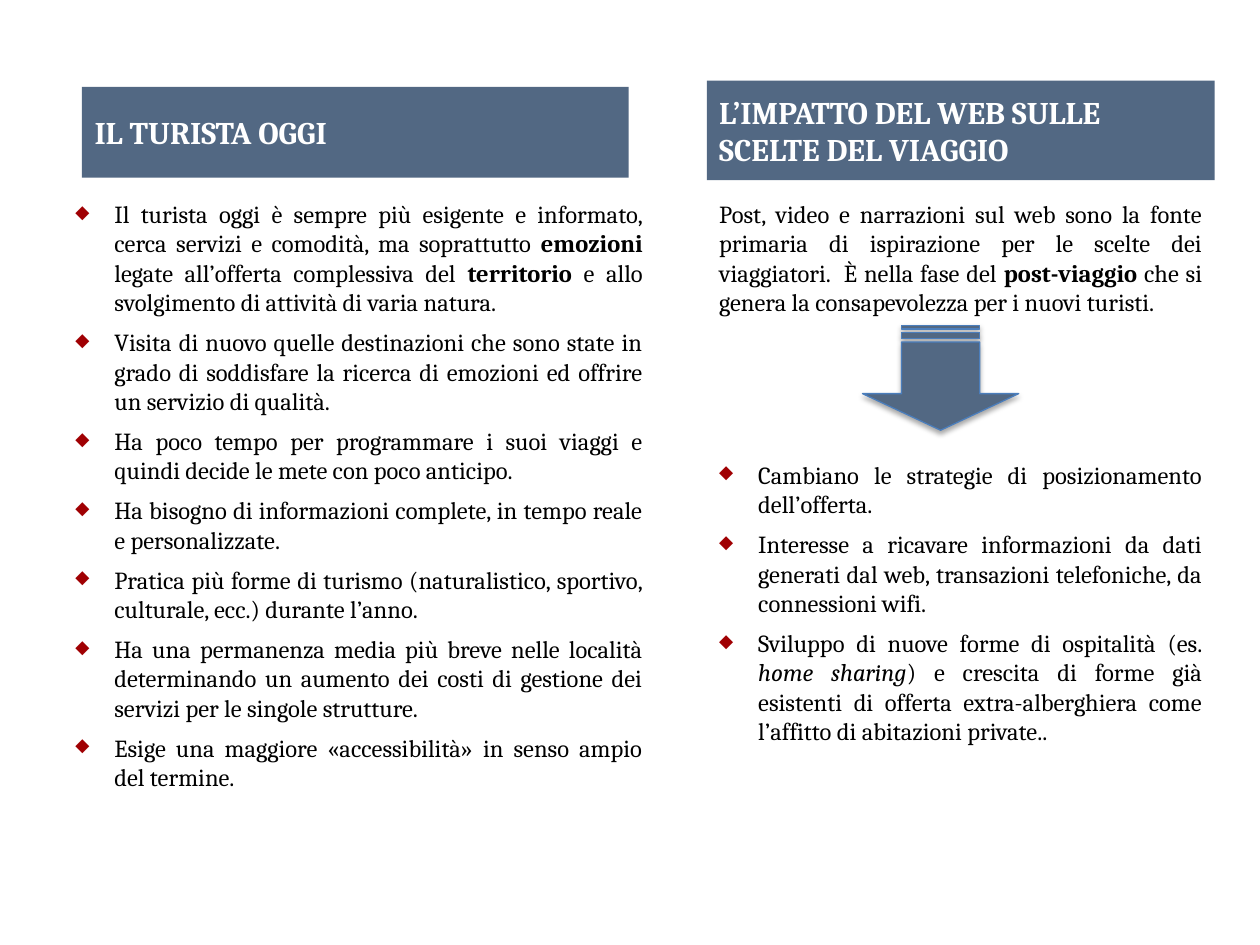
from lxml import etree
from pptx import Presentation
from pptx.dml.color import RGBColor
from pptx.enum.shapes import MSO_SHAPE
from pptx.enum.text import MSO_ANCHOR, MSO_AUTO_SIZE, PP_ALIGN
from pptx.oxml.ns import qn
from pptx.util import Inches, Pt

RECTANGLE = MSO_SHAPE.RECTANGLE
STRIPED_ARROW = MSO_SHAPE.STRIPED_RIGHT_ARROW
MIDDLE = MSO_ANCHOR.MIDDLE
NO_FIT = MSO_AUTO_SIZE.NONE
GROW = MSO_AUTO_SIZE.SHAPE_TO_FIT_TEXT
LEFT = PP_ALIGN.LEFT
JUSTIFY = PP_ALIGN.JUSTIFY

FONT = "Cambria"
SLATE = "526883"
BLUE = "4B7EBC"
RED = "A00003"
WHITE = "FFFFFF"
BLACK = "000000"
INDENT = Inches(0.31)
RIGHT_LEFT, RIGHT_WIDTH = 5.61, 4.03
BODY_TOP = 1.53

TOURIST_TODAY = [
    [("Il turista oggi è sempre più esigente e informato, cerca servizi e comodità, ma soprattutto ", ""),
     ("emozioni ", "bold"),
     ("legate all’offerta complessiva del ", ""),
     ("territorio ", "bold"),
     ("e allo svolgimento di attività di varia natura.", "")],
    [("Visita di nuovo quelle destinazioni che sono state in grado di soddisfare "
      "la ricerca di emozioni ed offrire un servizio di qualità.", "")],
    [("Ha poco tempo per programmare i suoi viaggi e quindi decide le mete con poco anticipo.", "")],
    [("Ha bisogno di informazioni complete, in tempo reale e personalizzate.", "")],
    [("Pratica più forme di turismo (naturalistico, sportivo, culturale, ecc.) durante l’anno.", "")],
    [("Ha una permanenza media più breve nelle località determinando un aumento "
      "dei costi di gestione dei servizi per le singole strutture.", "")],
    [("Esige una maggiore «accessibilità» in senso ampio del termine.", "")],
]
WEB_IMPACT = [
    [("Post, video e narrazioni sul web sono la fonte primaria di ispirazione "
      "per le scelte dei viaggiatori.  È nella fase del ", ""),
     ("post-viaggio ", "bold"),
     ("che si genera la consapevolezza per i nuovi turisti.", "")],
]
CONSEQUENCES = [
    [("Cambiano le strategie di posizionamento dell’offerta. ", "")],
    [("Interesse a ricavare informazioni da dati generati dal web, "
      "transazioni telefoniche, da connessioni wifi.", "")],
    [("Sviluppo di nuove forme di ospitalità (es. ", ""),
     ("home sharing", "italic"),
     (") e crescita di forme già esistenti di offerta extra-alberghiera "
      "come l’affitto di abitazioni private.. ", "")],
]


def color(value):
    return RGBColor.from_string(value)


def fill_solid(shape, value):
    shape.fill.solid()
    shape.fill.fore_color.rgb = color(value)


def set_font(paragraph, size, value):
    paragraph.font.name = FONT
    paragraph.font.size = Pt(size)
    paragraph.font.color.rgb = color(value)


def format_heading(shape, text):
    fill_solid(shape, SLATE)
    shape.line.fill.background()
    frame = shape.text_frame
    frame.text = text
    frame.word_wrap = True
    frame.auto_size = NO_FIT
    frame.vertical_anchor = MIDDLE
    paragraph = frame.paragraphs[0]
    paragraph.alignment = LEFT
    set_font(paragraph, 18, WHITE)
    paragraph.font.bold = True


def add_bullet(paragraph):
    paragraph.space_after = Pt(6)
    properties = paragraph._p.get_or_add_pPr()
    properties.set("marL", str(INDENT))
    properties.set("indent", str(-INDENT))
    bullet_color = etree.SubElement(properties, qn("a:buClr"))
    etree.SubElement(bullet_color, qn("a:srgbClr"), val=RED)
    etree.SubElement(properties, qn("a:buSzPct"), val="75000")
    etree.SubElement(properties, qn("a:buChar"), char="◆")


def add_body(slide, left, top, width, height, items, bulleted):
    box = slide.shapes.add_textbox(Inches(left), Inches(top), Inches(width), Inches(height))
    frame = box.text_frame
    frame.word_wrap = True
    frame.auto_size = GROW
    for index, spans in enumerate(items):
        paragraph = frame.add_paragraph() if index else frame.paragraphs[0]
        paragraph.alignment = JUSTIFY
        if bulleted:
            add_bullet(paragraph)
        set_font(paragraph, 14, BLACK)
        for text, style in spans:
            span = paragraph.add_run()
            span.text = text
            if style:
                setattr(span.font, style, True)


def add_shadow(shape):
    effects = etree.SubElement(shape._element.spPr, qn("a:effectLst"))
    shadow = etree.SubElement(
        effects, qn("a:outerShdw"), blurRad=str(Pt(3.1)), dist=str(Pt(1.8)),
        dir="5400000", rotWithShape="0")
    shade = etree.SubElement(shadow, qn("a:srgbClr"), val=BLACK)
    etree.SubElement(shade, qn("a:alpha"), val="35000")


def add_down_arrow(slide):
    arrow = slide.shapes.add_shape(
        STRIPED_ARROW, Inches(7.05), Inches(2.38), Inches(0.83), Inches(1.24))
    arrow.rotation = 90
    arrow.adjustments[0] = 0.5
    arrow.adjustments[1] = 0.35
    fill_solid(arrow, SLATE)
    arrow.line.color.rgb = color(BLUE)
    arrow.line.width = Pt(0.75)
    add_shadow(arrow)


def main():
    deck = Presentation()
    deck.slide_width, deck.slide_height = Inches(10), Inches(7.5)
    slide = deck.slides.add_slide(deck.slide_layouts[5])

    title = slide.shapes.title
    title.left, title.top = Inches(0.65), Inches(0.69)
    title.width, title.height = Inches(4.34), Inches(0.72)
    format_heading(title, "IL TURISTA OGGI")
    add_body(slide, 0.5, BODY_TOP, 4.7, 5.08, TOURIST_TODAY, True)

    add_body(slide, RIGHT_LEFT, 3.6, RIGHT_WIDTH, 2.39, CONSEQUENCES, True)
    heading = slide.shapes.add_shape(
        RECTANGLE, Inches(RIGHT_LEFT), Inches(0.64), Inches(RIGHT_WIDTH), Inches(0.79))
    heading.shadow.inherit = False
    format_heading(heading, "L’IMPATTO DEL WEB SULLE SCELTE DEL VIAGGIO")
    add_body(slide, RIGHT_LEFT, BODY_TOP, RIGHT_WIDTH, 1.04, WEB_IMPACT, False)
    add_down_arrow(slide)

    deck.save("out.pptx")


if __name__ == "__main__":
    main()
